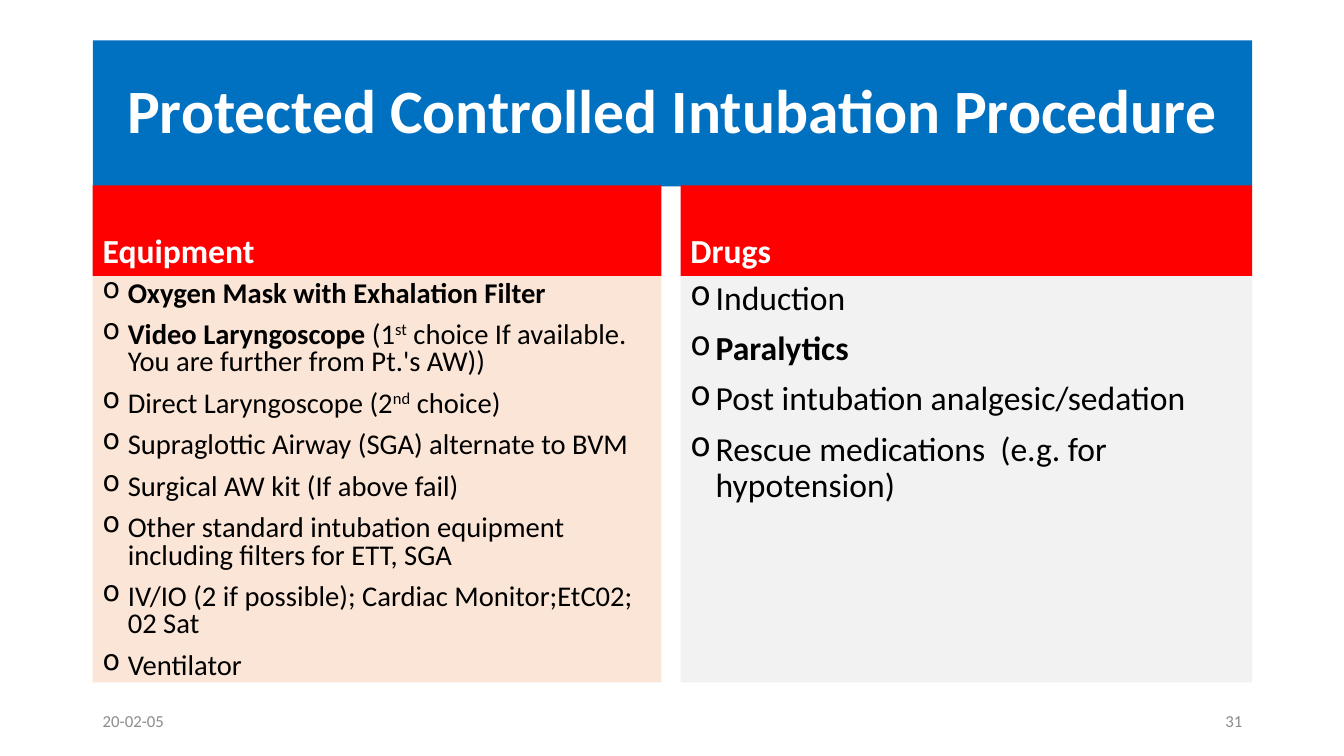
from lxml.etree import SubElement
from pptx import Presentation
from pptx.dml.color import RGBColor
from pptx.enum.text import MSO_ANCHOR, PP_ALIGN
from pptx.oxml.ns import qn
from pptx.util import Inches, Pt

BLUE = RGBColor(0x00, 0x70, 0xC0)
RED = RGBColor(0xFF, 0x00, 0x00)
PEACH = RGBColor(0xFB, 0xE5, 0xD6)
PALE_GRAY = RGBColor(0xF2, 0xF2, 0xF2)
GRAY = RGBColor(0x8C, 0x8C, 0x8C)
WHITE = RGBColor(0xFF, 0xFF, 0xFF)
BLACK = RGBColor(0x00, 0x00, 0x00)

FONT = "Calibri"
PLAIN, BOLD, SUPER = "plain", "bold", "super"

TITLE = "Protected Controlled Intubation Procedure"
EQUIPMENT = [
    [("Oxygen Mask with Exhalation Filter", BOLD)],
    [("Video Laryngoscope ", BOLD), ("(1", PLAIN), ("st", SUPER),
     (" choice If available. You are further from Pt.'s AW))", PLAIN)],
    [("Direct Laryngoscope (2", PLAIN), ("nd", SUPER), (" choice)", PLAIN)],
    [("Supraglottic Airway (SGA) alternate to BVM", PLAIN)],
    [("Surgical AW kit (If above fail)", PLAIN)],
    [("Other standard intubation equipment including filters for ETT, SGA", PLAIN)],
    [("IV/IO (2 if possible); Cardiac Monitor;EtC02; 02 Sat", PLAIN)],
    [("Ventilator", PLAIN)],
]
DRUGS = [
    [("Induction", PLAIN)],
    [("Paralytics", BOLD)],
    [("Post intubation analgesic/sedation", PLAIN)],
    [("Rescue medications  (e.g. for hypotension)", PLAIN)],
]
LEFT, RIGHT = 0.92, 12.42
COLUMNS = [
    ("Equipment", EQUIPMENT, LEFT, 5.64, PEACH, 20.4, 0.8),
    ("Drugs", DRUGS, 6.75, RIGHT - 6.75, PALE_GRAY, 24, 0.9),
]
FOOTER_WIDTH = 3
FOOTERS = [
    ("20-02-05", LEFT, PP_ALIGN.LEFT),
    ("31", RIGHT - FOOTER_WIDTH, PP_ALIGN.RIGHT),
]
TITLE_TOP, HEADING_TOP, LIST_TOP, LIST_BOTTOM = 0.4, 1.84, 2.74, 6.77


def add_panel(slide, left, top, width, height, anchor, fill=None):
    panel = slide.shapes.add_textbox(
        Inches(left), Inches(top), Inches(width), Inches(height))
    if fill is not None:
        panel.fill.solid()
        panel.fill.fore_color.rgb = fill
    panel.text_frame.word_wrap = True
    panel.text_frame.vertical_anchor = anchor
    return panel.text_frame


def style_run(run, size, color, style=PLAIN):
    run.font.name = FONT
    run.font.size = Pt(size)
    run.font.color.rgb = color
    run.font.bold = style == BOLD
    if style == SUPER:
        run.font._element.set("baseline", "30000")


def write_line(frame, text, size, color, style=PLAIN, align=PP_ALIGN.LEFT):
    frame.text = text
    line = frame.paragraphs[0]
    line.alignment = align
    style_run(line.runs[0], size, color, style)
    return line


def write_bullets(frame, items, size, spacing):
    for index, item in enumerate(items):
        line = frame.add_paragraph() if index else frame.paragraphs[0]
        line.line_spacing = spacing
        line.space_before = Pt(10)
        properties = line._p.get_or_add_pPr()
        properties.set("marL", str(Inches(0.25)))
        properties.set("indent", str(-Inches(0.25)))
        SubElement(properties, qn("a:buChar")).set("char", "o")
        for text, style in item:
            run = line.add_run()
            run.text = text
            style_run(run, size, BLACK, style)


def main():
    deck = Presentation()
    deck.slide_width, deck.slide_height = Inches(13.33), Inches(7.5)
    slide = deck.slides.add_slide(deck.slide_layouts[5])

    title = slide.shapes.title
    title.left, title.top = Inches(LEFT), Inches(TITLE_TOP)
    title.width, title.height = Inches(RIGHT - LEFT), Inches(1.45)
    title.fill.solid()
    title.fill.fore_color.rgb = BLUE
    title.text_frame.vertical_anchor = MSO_ANCHOR.MIDDLE
    write_line(title.text_frame, TITLE, 44, WHITE, BOLD,
               PP_ALIGN.CENTER).line_spacing = 0.9

    for heading, items, left, width, fill, size, spacing in COLUMNS:
        heading_frame = add_panel(slide, left, HEADING_TOP, width,
                                  LIST_TOP - HEADING_TOP, MSO_ANCHOR.BOTTOM, RED)
        heading_line = write_line(heading_frame, heading, 24, WHITE, BOLD)
        heading_line.line_spacing = 0.9
        heading_line.space_before = Pt(10)
        list_frame = add_panel(slide, left, LIST_TOP, width,
                               LIST_BOTTOM - LIST_TOP, MSO_ANCHOR.TOP, fill)
        write_bullets(list_frame, items, size, spacing)

    for text, left, align in FOOTERS:
        footer = add_panel(slide, left, 6.95, FOOTER_WIDTH, 0.4, MSO_ANCHOR.MIDDLE)
        write_line(footer, text, 12, GRAY, align=align)

    deck.save("out.pptx")


if __name__ == "__main__":
    main()
